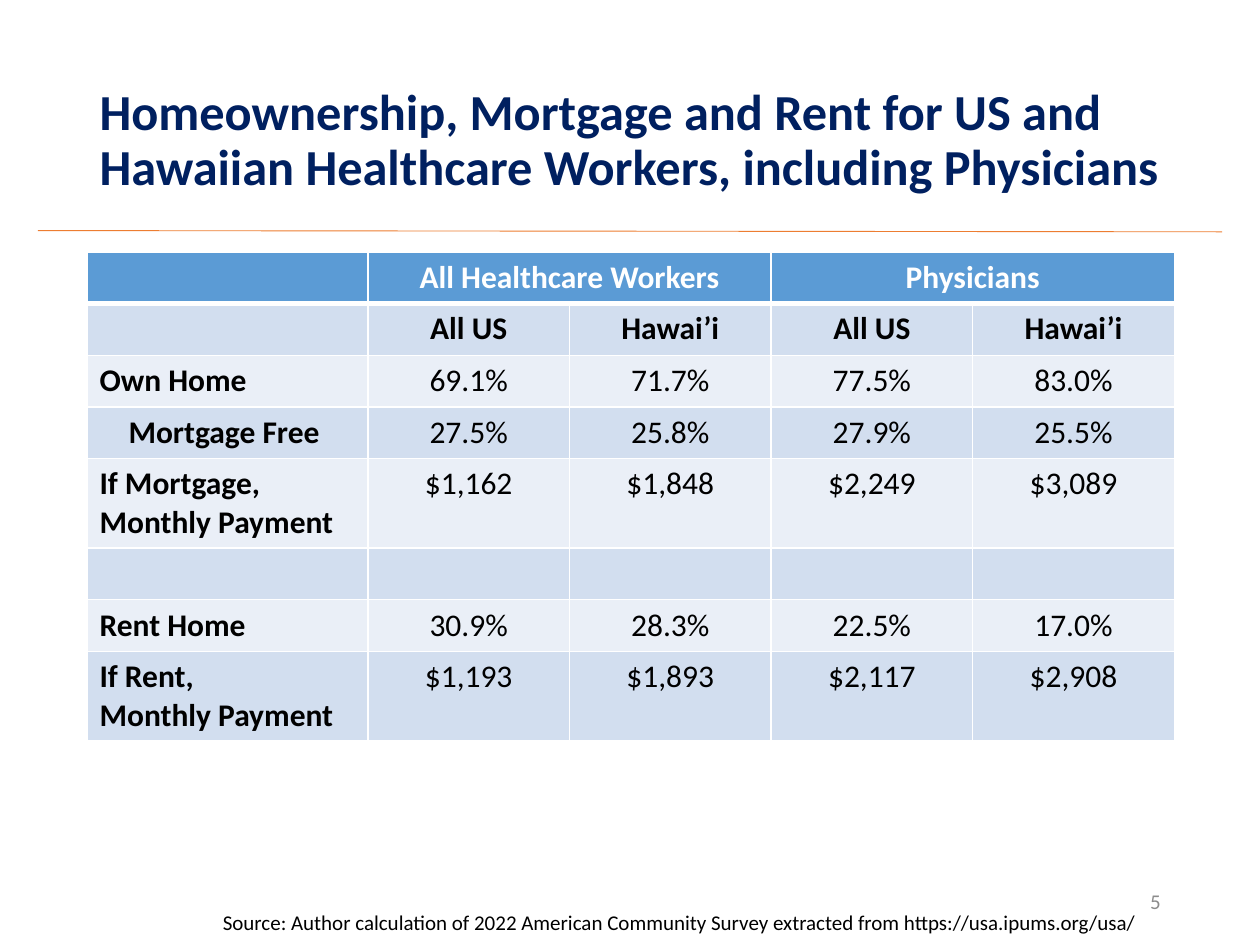
from lxml import etree
from pptx import Presentation
from pptx import util as u
from pptx.dml.color import RGBColor
from pptx.enum import shapes, text
from pptx.oxml import ns

NAVY = RGBColor(0x00, 0x20, 0x60)
ORANGE = RGBColor(0xED, 0x7D, 0x31)
BLUE = RGBColor(0x5B, 0x9B, 0xD5)
PALE = RGBColor(0xD2, 0xDE, 0xEF)
LIGHT = RGBColor(0xEA, 0xEF, 0xF7)
GRAY = RGBColor(0x8C, 0x8C, 0x8C)
BLACK = RGBColor(0, 0, 0)
WHITE = RGBColor(255, 255, 255)
FONT = "Calibri"
WIDE, HIGH = 10, 7.5
EDGE = 0.69
TITLE = "Homeownership, Mortgage and Rent for US and Hawaiian Healthcare Workers, including Physicians"
SOURCE = ("Source: Author calculation of 2022 American Community Survey "
          "extracted from https://usa.ipums.org/usa/")
COLS = [2.23] + [1.6] * 4
SHORT, TALL = 0.41, 0.71
INDENT = "Mortgage Free"
ROWS = [
    ["", "All Healthcare Workers", "", "Physicians", ""],
    ["", "All US", "Hawai’i", "All US", "Hawai’i"],
    ["Own Home", "69.1%", "71.7%", "77.5%", "83.0%"],
    [INDENT, "27.5%", "25.8%", "27.9%", "25.5%"],
    ["If Mortgage, Monthly Payment", "$1,162", "$1,848", "$2,249", "$3,089"],
    [""] * 5,
    ["Rent Home", "30.9%", "28.3%", "22.5%", "17.0%"],
    ["If Rent,\nMonthly Payment", "$1,193", "$1,893", "$2,117", "$2,908"],
]


def write(frame, words, size, color, bold=False, align=text.PP_ALIGN.LEFT):
    """Fill a text frame, one paragraph for each line of words."""
    for i, line in enumerate(words.split("\n")):
        para = frame.add_paragraph() if i else frame.paragraphs[0]
        para.alignment = align
        run = para.add_run()
        run.text = line
        font = run.font
        font.name, font.size, font.bold = FONT, u.Pt(size), bold
        font.color.rgb = color


def place(shape, left, top, width, height):
    """Set the place and size of a shape in inches."""
    shape.left, shape.top = u.Inches(left), u.Inches(top)
    shape.width, shape.height = u.Inches(width), u.Inches(height)


def head(slide):
    """Format the title placeholder."""
    title = slide.shapes.title
    place(title, EDGE, 0.4, WIDE - 2 * EDGE, 1.45)
    frame = title.text_frame
    frame.word_wrap = True
    frame.auto_size = text.MSO_AUTO_SIZE.NONE
    frame.vertical_anchor = text.MSO_ANCHOR.MIDDLE
    write(frame, TITLE, 28.8, NAVY, True)
    frame.paragraphs[0].line_spacing = 0.9


def rule(slide):
    """Draw the thin line below the title."""
    ends = [u.Inches(n) for n in (0.3, 1.83, WIDE - 0.3, 1.84)]
    line = slide.shapes.add_connector(shapes.MSO_CONNECTOR.STRAIGHT, *ends)
    line.line.color.rgb = ORANGE
    line.line.width = u.Pt(0.5)
    etree.SubElement(line._element.spPr, ns.qn("a:effectLst"))


def border(cell, row):
    """Give a cell white edges, thick between header and body."""
    props = cell._tc.get_or_add_tcPr()
    thick = {0: "lnB", 1: "lnT"}.get(row)
    for side in ("lnL", "lnR", "lnT", "lnB"):
        width = u.Pt(3 if side == thick else 1)
        edge = etree.SubElement(props, ns.qn(f"a:{side}"), w=str(int(width)))
        fill = etree.SubElement(edge, ns.qn("a:solidFill"))
        etree.SubElement(fill, ns.qn("a:srgbClr"), val=str(WHITE))


def grid(slide):
    """Build the table of ownership, mortgage and rent."""
    heights = [TALL if row[0].endswith("Payment") else SHORT for row in ROWS]
    box = [u.Inches(n) for n in (EDGE, 2, sum(COLS), sum(heights))]
    table = slide.shapes.add_table(len(ROWS), len(COLS), *box).table
    for col, width in zip(table.columns, COLS):
        col.width = u.Inches(width)
    for r, row in enumerate(ROWS):
        table.rows[r].height = u.Inches(heights[r])
        for c, words in enumerate(row):
            cell = table.cell(r, c)
            border(cell, r)
            cell.fill.solid()
            cell.fill.fore_color.rgb = BLUE if r == 0 else PALE if r % 2 else LIGHT
            if words == INDENT:
                cell.margin_left = u.Inches(0.33)
            if words:
                write(cell.text_frame, words, 18, BLACK if r else WHITE, r < 2 or c == 0,
                      text.PP_ALIGN.CENTER if c else text.PP_ALIGN.LEFT)
    for c in (1, 3):
        table.cell(0, c).merge(table.cell(0, c + 1))


def note(slide, box, words, color, align, anchor):
    """Add a small line of text at the foot of the slide."""
    frame = slide.shapes.add_textbox(*[u.Inches(n) for n in box]).text_frame
    frame.word_wrap = True
    frame.vertical_anchor = anchor
    write(frame, words, 12, color, align=align)


def main():
    """Build and save the slide."""
    deck = Presentation()
    deck.slide_width, deck.slide_height = u.Inches(WIDE), u.Inches(HIGH)
    slide = deck.slides.add_slide(deck.slide_layouts.get_by_name("Title Only"))
    rule(slide)
    head(slide)
    grid(slide)
    note(slide, (7.06, 6.95, 2.25, 0.4), "5", GRAY,
         text.PP_ALIGN.RIGHT, text.MSO_ANCHOR.MIDDLE)
    note(slide, (1.67, 7.17, 7.5, 0.3), SOURCE, BLACK,
         text.PP_ALIGN.LEFT, text.MSO_ANCHOR.TOP)
    deck.save("out.pptx")


if __name__ == "__main__":
    main()
